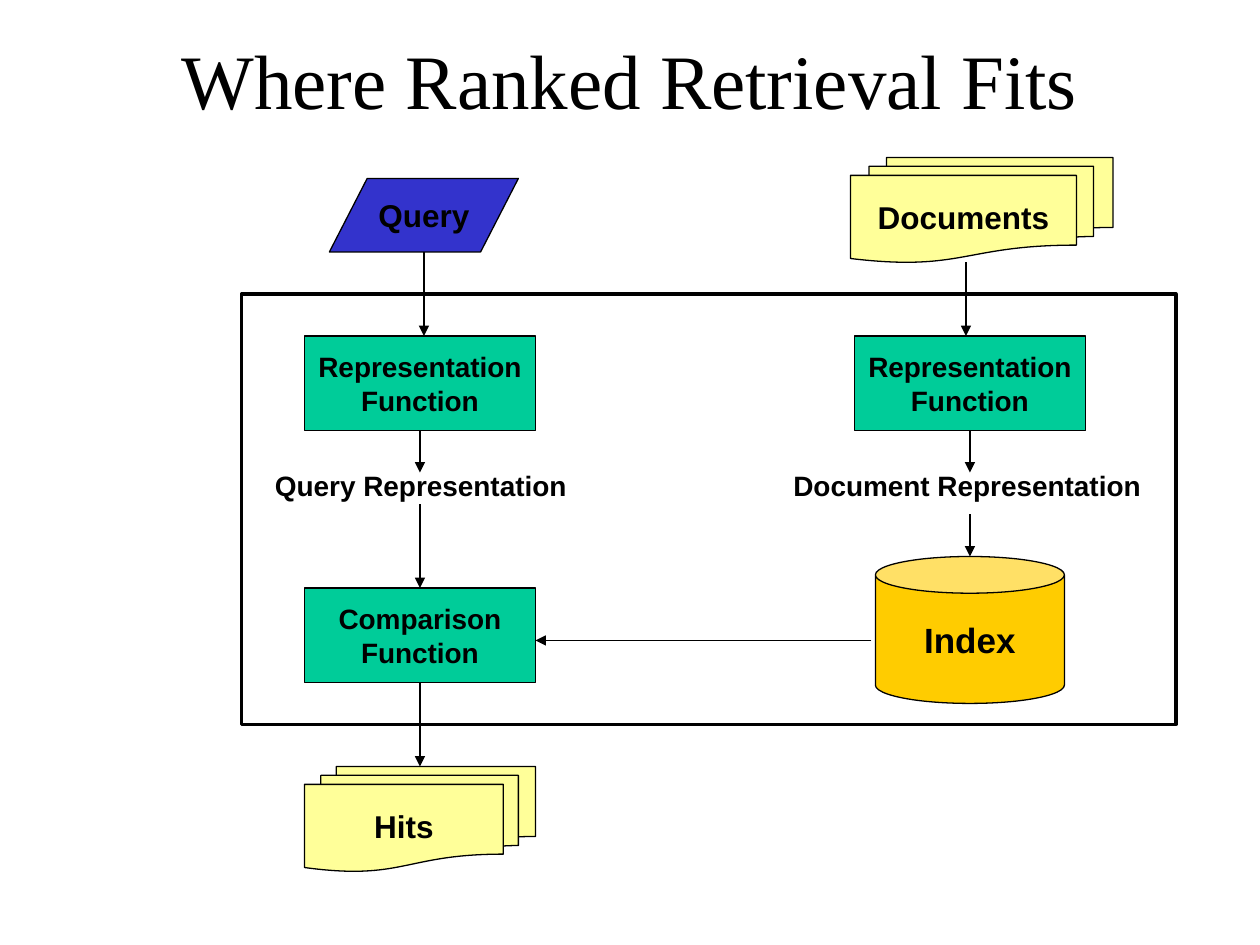
"""Build a slide showing where ranked retrieval fits in a search system."""
from lxml import etree
from pptx import Presentation
from pptx import util as u
from pptx.dml.color import RGBColor
from pptx.enum import shapes, text
from pptx.oxml.ns import qn

PX = 9525
COLORS = {"ink": "000000", "paper": "FFFF99", "query": "3333CC",
          "function": "00CC99", "index": "FFCC00"}
MSO = shapes.MSO_SHAPE


def px(*values):
    """Turn pixel lengths into EMU."""
    return [u.Emu(v * PX) for v in values]


def rgb(name):
    """Return a named colour."""
    return RGBColor.from_string(COLORS[name])


def write(tf, content, size, font="Arial", bold=True,
          align=text.PP_ALIGN.CENTER, anchor=text.MSO_ANCHOR.MIDDLE, wrap=False):
    """Fill a text frame, one paragraph for each line of content."""
    tf.word_wrap, tf.vertical_anchor = wrap, anchor
    for i, line in enumerate(content.split("\n")):
        p = tf.add_paragraph() if i else tf.paragraphs[0]
        p.alignment = align
        r = p.add_run()
        r.text = line
        r.font.name, r.font.size, r.font.bold = font, u.Pt(size), bold
        r.font.color.rgb = rgb("ink")


def add_node(s, kind, box, fill=None, content=None, size=16, line=0.75):
    """Draw an outlined preset shape with optional fill and text."""
    sp = s.shapes.add_shape(kind, *px(*box))
    sp.shadow.inherit = False
    if fill:
        sp.fill.solid()
        sp.fill.fore_color.rgb = rgb(fill)
    else:
        sp.fill.background()
    sp.line.color.rgb, sp.line.width = rgb("ink"), u.Pt(line)
    if content:
        write(sp.text_frame, content, size)
    return sp


def add_label(s, box, content):
    """Place a bold label that fits its text."""
    tf = s.shapes.add_textbox(*px(*box)).text_frame
    write(tf, content, 16, align=text.PP_ALIGN.LEFT, anchor=text.MSO_ANCHOR.TOP)
    tf.auto_size = text.MSO_AUTO_SIZE.SHAPE_TO_FIT_TEXT


def add_arrow(s, start, end, source=None, target=None):
    """Draw an arrow, joined to a source's bottom or a target's top if given."""
    c = s.shapes.add_connector(shapes.MSO_CONNECTOR.STRAIGHT, *px(*start, *end))
    if source:
        c.begin_connect(source, 2)
    if target:
        c.end_connect(target, 0)
    c.line.color.rgb, c.line.width = rgb("ink"), u.Pt(0.75)
    etree.SubElement(c.line._get_or_add_ln(), qn("a:tailEnd"), type="triangle")
    etree.SubElement(c._element.spPr, qn("a:effectLst"))


def add_title(s, box, content):
    """Place and format the title placeholder."""
    sp = s.shapes.title
    sp.left, sp.top, sp.width, sp.height = px(*box)
    write(sp.text_frame, content, 44, "Times New Roman", False, wrap=True)


def query_column(s, x, y, w):
    """Draw the path from query to hits."""
    mid = x + w // 2
    add_node(s, MSO.FLOWCHART_DATA, (x + 19, y, 144, 56), "query", "Query", 18)
    add_node(s, MSO.FLOWCHART_MULTIDOCUMENT, (x, y + 448, w, 80), "paper", "Hits", 18)
    represent, compare = (
        add_node(s, MSO.RECTANGLE, (x, y + dy, w, 72), "function", f"{name}\nFunction")
        for dy, name in ((120, "Representation"), (312, "Comparison")))
    add_label(s, (x - 32, y + 216, 242, 36), "Query Representation")
    add_arrow(s, (x + 91, y + 56), (x + 91, y + 120))
    add_arrow(s, (mid, y + 192), (mid, y + 224), source=represent)
    add_arrow(s, (mid, y + 248), (mid, y + 312), target=compare)
    add_arrow(s, (mid, y + 384), (mid, y + 448), source=compare)


def document_column(s, x, y, w):
    """Draw the path from documents to index."""
    mid = x + w // 2
    add_node(s, MSO.FLOWCHART_MULTIDOCUMENT, (x - 3, y, 200, 80), "paper", "Documents", 18)
    represent = add_node(s, MSO.RECTANGLE, (x, y + 136, w, 72), "function",
                         "Representation\nFunction")
    add_label(s, (x - 56, y + 232, 285, 36), "Document Representation")
    add_node(s, MSO.CAN, (mid - 72, y + 304, 144, 112), "index", "Index", 20)
    add_arrow(s, (mid - 3, y + 80), (mid - 3, y + 136))
    add_arrow(s, (mid, y + 208), (mid, y + 240), source=represent)
    add_arrow(s, (mid, y + 272), (mid, y + 304))


def main():
    """Build and save the slide."""
    prs = Presentation()
    prs.slide_width, prs.slide_height = px(960, 720)
    s = prs.slides.add_slide(prs.slide_layouts[5])
    add_title(s, (72, 0, 816, 120), "Where Ranked Retrieval Fits")
    query_column(s, 232, 136, 176)
    document_column(s, 651, 120, 176)
    add_arrow(s, (664, 488), (408, 488))
    add_node(s, MSO.RECTANGLE, (184, 224, 712, 328), line=2)
    prs.save("out.pptx")


if __name__ == "__main__":
    main()
